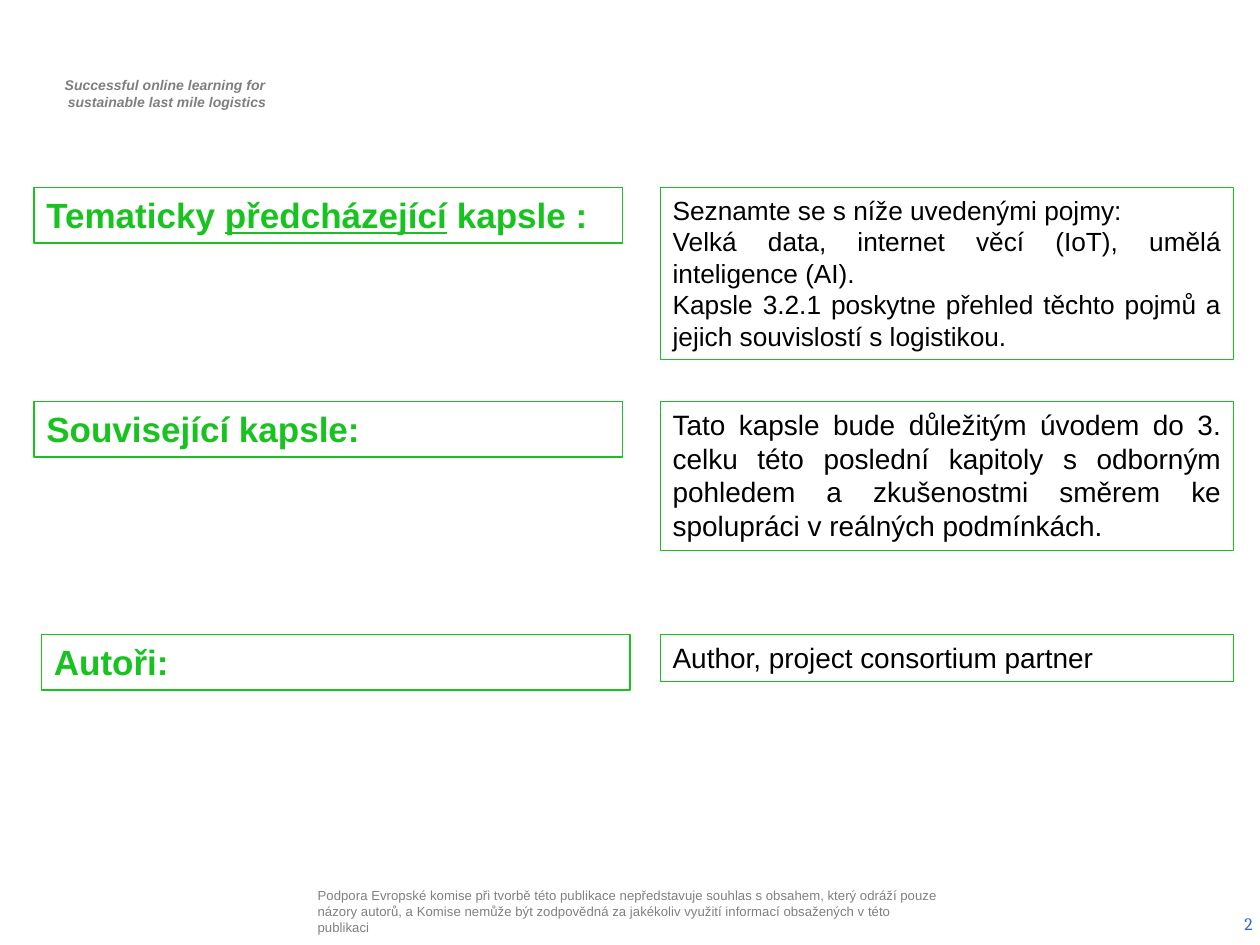
from pptx import Presentation
from pptx.dml.color import RGBColor
from pptx.enum.shapes import MSO_SHAPE
from pptx.enum.text import MSO_ANCHOR, MSO_AUTO_SIZE, PP_ALIGN
from pptx.util import Pt

LEFT, MID, RIGHT, FULL = PP_ALIGN.LEFT, PP_ALIGN.CENTER, PP_ALIGN.RIGHT, PP_ALIGN.JUSTIFY
TOP, CENTRE = MSO_ANCHOR.TOP, MSO_ANCHOR.MIDDLE
RECT = MSO_SHAPE.RECTANGLE
FIT = MSO_AUTO_SIZE.SHAPE_TO_FIT_TEXT

GREEN, BLACK, WHITE = "18C320", "000000", "FFFFFF"
GREY, PALE, BLUE = "7F7F7F", "808080", "3366CC"

HEADER = ["Successful online learning for ", "sustainable last mile logistics"]
FOOTER = ("Podpora Evropské komise při tvorbě této publikace nepředstavuje souhlas "
          "s obsahem, který odráží pouze názory autorů, a Komise nemůže být "
          "zodpovědná za jakékoliv využití informací obsažených v této publikaci")

# Underlined words are given as a tuple.
ROWS = [
    {"top": 107.3, "left": 19.4,
     "head": ["Tematicky ", ("předcházející",), " kapsle :"],
     "body": ["Seznamte se s níže uvedenými pojmy:",
              "Velká data, internet věcí (IoT), umělá inteligence (AI).",
              "Kapsle 3.2.1 poskytne přehled těchto pojmů a jejich souvislostí "
              "s logistikou."],
     "size": 15, "high": 98, "align": FULL},
    {"top": 229.5, "left": 19.4,
     "head": ["Související kapsle:"],
     "body": ["Tato kapsle bude důležitým úvodem do 3. celku této poslední kapitoly "
              "s odborným pohledem a zkušenostmi směrem ke spolupráci v reálných "
              "podmínkách."],
     "size": 16, "high": 85, "align": FULL},
    {"top": 362.6, "left": 23.7,
     "head": ["Autoři:"],
     "body": ["Author, project consortium partner"],
     "size": 16, "high": 26.7, "align": LEFT},
]
HEAD_W, HEAD_H = 336.3, 31.7
BODY_X, BODY_W = 377.3, 327.6


def tint(code):
    return RGBColor.from_string(code)


def write(shape, paras, size, color, font="Arial", bold=None, slant=None,
          align=LEFT, anchor=TOP, pad=(7.2, 3.6)):
    """Fill a shape with paragraphs, each a list of runs."""
    frame = shape.text_frame
    frame.word_wrap = True
    frame.vertical_anchor = anchor
    frame.margin_left = frame.margin_right = Pt(pad[0])
    frame.margin_top = frame.margin_bottom = Pt(pad[1])
    for i, runs in enumerate(paras):
        para = frame.add_paragraph() if i else frame.paragraphs[0]
        para.alignment = align
        for part in runs:
            run = para.add_run()
            lined = isinstance(part, tuple)
            run.text = part[0] if lined else part
            face = run.font
            face.name, face.size = font, Pt(size)
            face.bold, face.italic = bold, slant
            face.color.rgb = tint(color)
            if lined:
                face.underline = True
    return frame


def label(slide, *box):
    return slide.shapes.add_textbox(*map(Pt, box))


def frame_box(slide, *box):
    """Add a white rectangle with a thin green outline."""
    shape = slide.shapes.add_shape(RECT, *map(Pt, box))
    shape.shadow.inherit = False
    shape.fill.solid()
    shape.fill.fore_color.rgb = tint(WHITE)
    shape.line.color.rgb = tint(GREEN)
    shape.line.width = Pt(0.75)
    return shape


def main():
    deck = Presentation()
    deck.slide_width, deck.slide_height = Pt(720), Pt(540)
    slide = deck.slides.add_slide(deck.slide_layouts[6])

    text = write(label(slide, 20.9, 40.3, 146.2, 26.6), [[line] for line in HEADER],
                 8, GREY, bold=True, slant=True, align=MID)
    text.auto_size = FIT
    for para in text.paragraphs:
        props = para._p.get_or_add_pPr()
        props.set("marL", str(Pt(3)))
        props.set("indent", "0")

    write(label(slide, 178.6, 502.6, 360.7, 36), [[FOOTER]], 7.5, PALE,
          anchor=CENTRE, pad=(2.9, 2.9))
    write(label(slide, 555.1, 513.4, 167.8, 28.8), [["2"]], 10, BLUE,
          font="Cambria", align=RIGHT, anchor=CENTRE)

    for row in ROWS:
        head = frame_box(slide, row["left"], row["top"], HEAD_W, HEAD_H)
        write(head, [row["head"]], 20, GREEN, bold=True).auto_size = FIT
        body = frame_box(slide, BODY_X, row["top"], BODY_W, row["high"])
        write(body, [[line] for line in row["body"]], row["size"], BLACK,
              align=row["align"]).auto_size = FIT

    deck.save("out.pptx")


if __name__ == "__main__":
    main()
